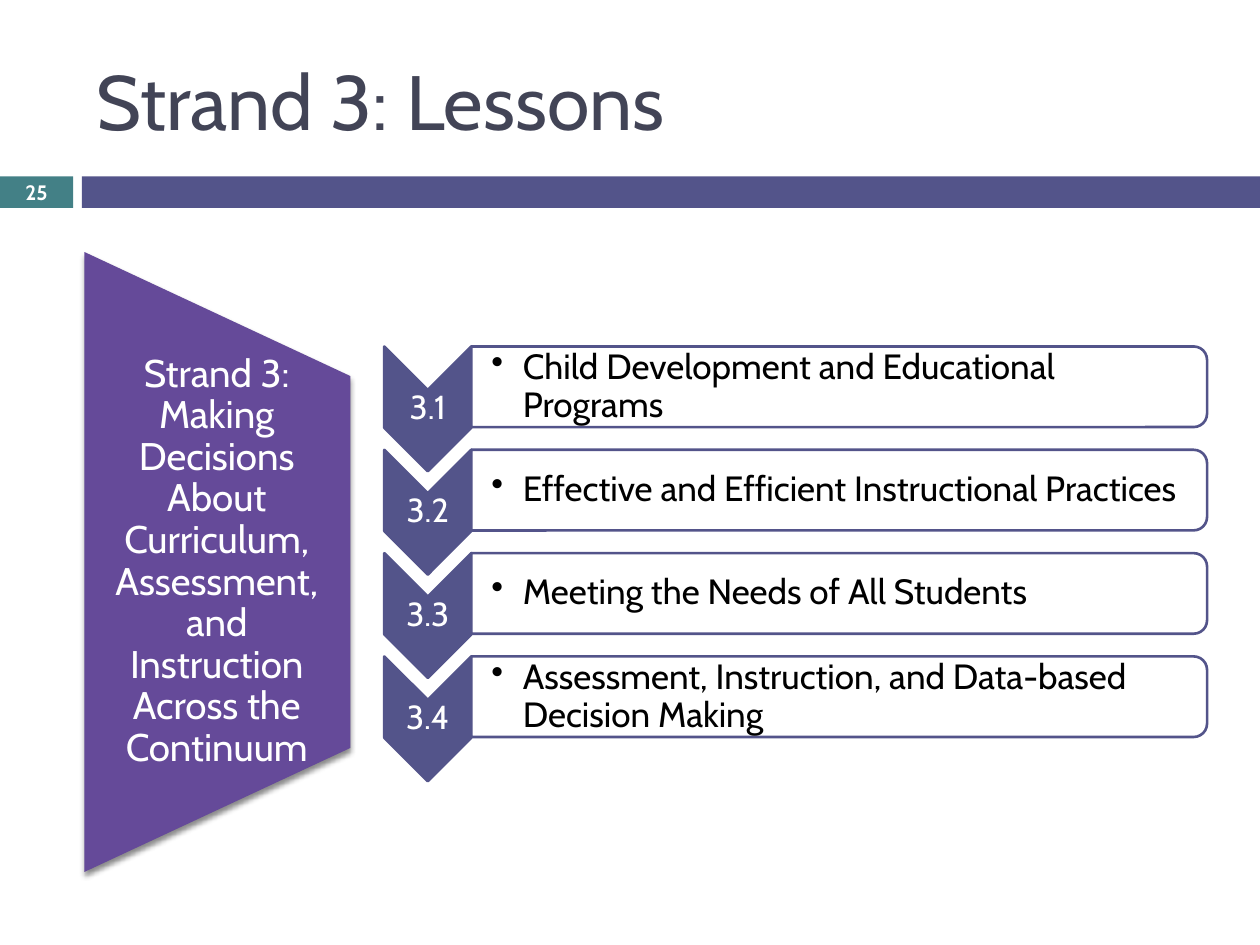
from lxml import etree
from pptx import Presentation
from pptx.dml.color import RGBColor
from pptx.enum.shapes import MSO_SHAPE
from pptx.enum.text import MSO_ANCHOR, PP_ALIGN
from pptx.oxml.ns import qn
from pptx.util import Inches, Pt

RECTANGLE = MSO_SHAPE.RECTANGLE
CHEVRON = MSO_SHAPE.CHEVRON
ROUND_PANEL = MSO_SHAPE.ROUND_2_SAME_RECTANGLE
TRAPEZOID = MSO_SHAPE.FLOWCHART_MANUAL_OPERATION
MIDDLE = MSO_ANCHOR.MIDDLE
LEFT, CENTER = PP_ALIGN.LEFT, PP_ALIGN.CENTER

WHITE = RGBColor(0xFF, 0xFF, 0xFF)
BLACK = RGBColor(0x00, 0x00, 0x00)
SLATE = RGBColor(0x42, 0x44, 0x56)
TEAL = RGBColor(0x43, 0x80, 0x86)
INDIGO = RGBColor(0x53, 0x54, 0x8A)
PURPLE = RGBColor(0x65, 0x4A, 0x99)

FONT = "Cabin"
DEFAULT_INSETS = (0.1, 0.05, 0.1, 0.05)
TIGHT_INSETS = (0.01, 0.01, 0.01, 0.01)
BULLET_INSETS = (0.16, 0.01, 0.01, 0.01)

STRAND = ("Strand 3: Making Decisions About Curriculum, Assessment, "
          "and Instruction Across the Continuum")
LESSONS = [
    ("3.1", "Child Development and Educational Programs"),
    ("3.2", "Effective and Efficient Instructional Practices"),
    ("3.3", "Meeting the Needs of All Students"),
    ("3.4", "Assessment, Instruction, and Data-based Decision Making"),
]


def add_block(page, kind, box, fill, line=None, rotation=0):
    """Add a shape that covers box, in inches, after a quarter turn if any."""
    left, top, width, height = box
    if rotation:
        left += (width - height) / 2
        top += (height - width) / 2
        width, height = height, width
    block = page.shapes.add_shape(
        kind, Inches(left), Inches(top), Inches(width), Inches(height))
    block.rotation = rotation
    block.shadow.inherit = False
    block.fill.solid()
    block.fill.fore_color.rgb = fill
    if line is None:
        block.line.fill.background()
    else:
        block.line.color.rgb = line
        block.line.width = Pt(1.5)
    return block


def add_label(page, box, text, size, color, align=LEFT,
              insets=DEFAULT_INSETS, spacing=None, bold=False):
    label = page.shapes.add_textbox(*(Inches(length) for length in box))
    frame = label.text_frame
    frame.word_wrap = True
    frame.vertical_anchor = MIDDLE
    (frame.margin_left, frame.margin_top,
     frame.margin_right, frame.margin_bottom) = map(Inches, insets)
    frame.text = text
    para = frame.paragraphs[0]
    para.alignment = align
    para.line_spacing = spacing
    font = para.runs[0].font
    font.name, font.size, font.bold = FONT, Pt(size), bold
    font.color.rgb = color
    return para


def add_bullet(para):
    properties = para._p.get_or_add_pPr()
    properties.set("marL", str(Inches(0.25)))
    properties.set("indent", str(-Inches(0.25)))
    etree.SubElement(properties, qn("a:buChar")).set("char", "•")


def add_drop_shadow(block):
    effects = block._element.spPr.find(qn("a:effectLst"))
    shadow = etree.SubElement(
        effects, qn("a:outerShdw"), blurRad=str(Pt(3)), dist=str(Pt(2.4)),
        dir="5400000", rotWithShape="0")
    color = etree.SubElement(shadow, qn("a:srgbClr"), val=str(BLACK))
    etree.SubElement(color, qn("a:alpha"), val="45000")


def add_header(page, box):
    left, top, width, height = box
    number_width, gap = 0.58, 0.07
    bar_left = left + number_width + gap
    bar_top, bar_height = top + 1.4, height - 1.4
    number_box = (left, bar_top, number_width, bar_height)
    add_block(page, RECTANGLE, number_box, TEAL)
    add_block(page, RECTANGLE,
              (bar_left, bar_top, left + width - bar_left, bar_height), INDIGO)
    add_label(page, (left + 0.67, top + 0.25, 8.92, 1.08),
              "Strand 3: Lessons", 44, SLATE)
    add_label(page, number_box, "25", 11.9, WHITE, CENTER, bold=True)


def add_strand(page, box):
    left, top, width, height = box
    add_drop_shadow(add_block(page, TRAPEZOID, box, PURPLE, rotation=270))
    add_label(page, (left, top + height / 5, width, height * 3 / 5), STRAND,
              22, WHITE, CENTER, (0.15, 0, 0.16, 0), 0.9)


def add_lesson(page, box, number, title):
    left, top, width, height = box
    arrow_width, arrow_height = 0.69, 0.99
    notch = arrow_width / 2
    add_block(page, CHEVRON, (left, top, arrow_width, arrow_height),
              INDIGO, INDIGO, 90)
    add_label(page, (left, top + notch, arrow_width, arrow_height - 2 * notch),
              number, 19, WHITE, CENTER, TIGHT_INSETS, 0.9)
    panel_left, panel_width = left + arrow_width, width - arrow_width
    add_block(page, ROUND_PANEL, (panel_left, top, panel_width, height),
              WHITE, INDIGO, 90)
    add_bullet(add_label(
        page, (panel_left, top + 0.03, panel_width - 0.03, height - 0.06),
        title, 20, BLACK, insets=BULLET_INSETS, spacing=0.9))


def add_lessons(page, box):
    left, top, width, height = box
    row_height = 0.64
    pitch = (height - row_height) / (len(LESSONS) - 1)
    for row, (number, title) in enumerate(LESSONS):
        add_lesson(page, (left, top + row * pitch, width, row_height),
                   number, title)


def main():
    deck = Presentation()
    deck.slide_width, deck.slide_height = Inches(10), Inches(7.5)
    page = deck.slides.add_slide(deck.slide_layouts[6])
    add_header(page, (0, 0, 10, 1.65))
    add_strand(page, (0.67, 2, 2.11, 4.92))
    add_lessons(page, (3.05, 2.75, 6.53, 3.1))
    deck.save("out.pptx")


if __name__ == "__main__":
    main()
